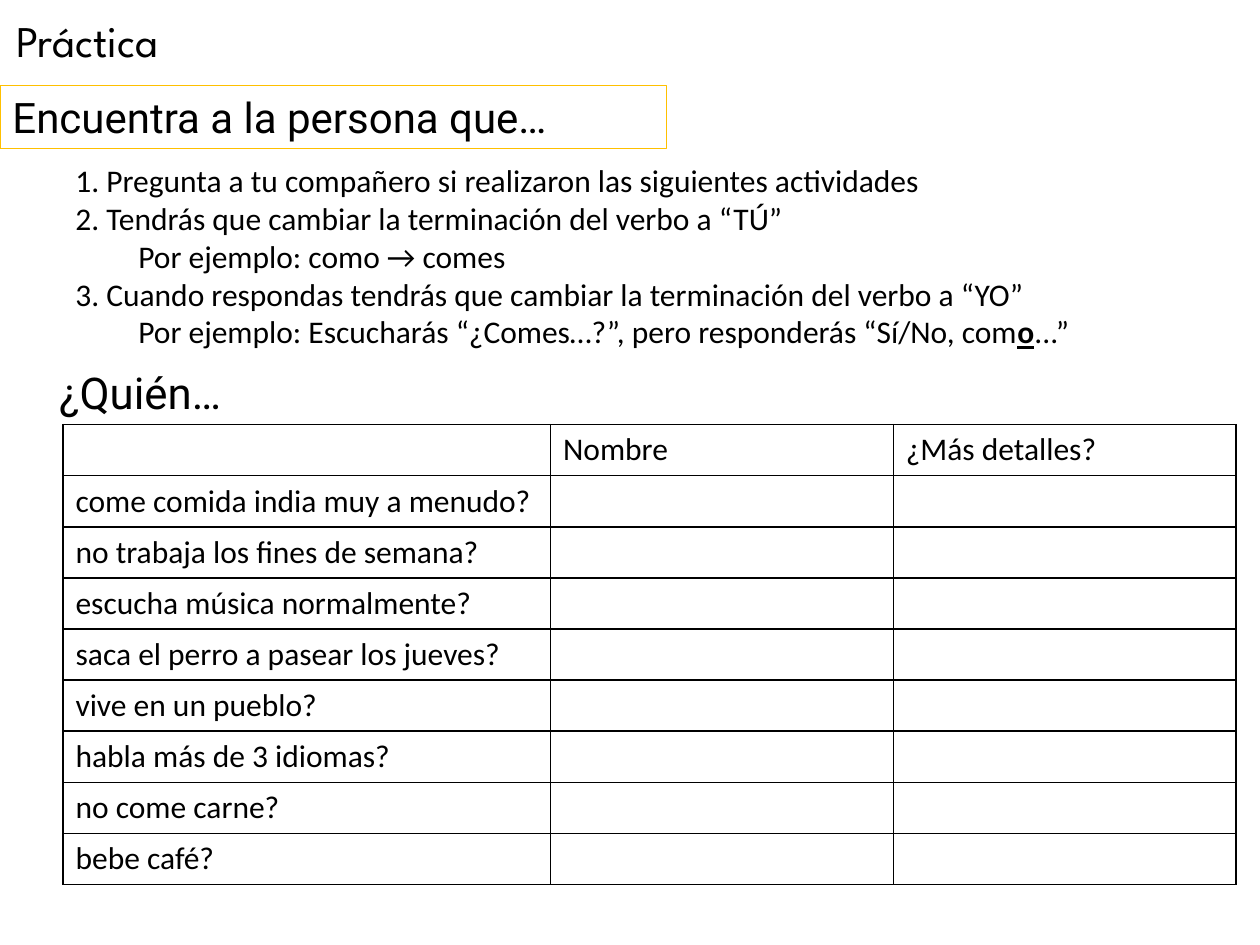
"""Build a Spanish class practice slide with instructions and an interview table."""
from lxml import etree
from pptx import Presentation
from pptx.dml.color import RGBColor
from pptx.enum import shapes, text
from pptx.oxml import ns
from pptx.util import Inches, Pt

BLACK = RGBColor(0, 0, 0)
WHITE = RGBColor(255, 255, 255)
GOLD = RGBColor(255, 192, 0)

BODY = {"name": "Calibri", "size": Pt(18)}
TITLE = {"name": "League Spartan", "size": Pt(25)}
BANNER = {"name": "Roboto", "size": Pt(24)}
QUESTION = {"name": "Roboto", "size": Pt(25)}
STRESSED = BODY | {"bold": True, "underline": True}

INSTRUCTIONS = [
    [("1. Pregunta a tu compañero si realizaron las siguientes actividades", BODY)],
    [("2. Tendrás que cambiar la terminación del verbo a “TÚ”", BODY)],
    [("\tPor ejemplo: como → comes", BODY)],
    [("3. Cuando respondas tendrás que cambiar la terminación del verbo a “YO”", BODY)],
    [("\tPor ejemplo: Escucharás “¿Comes…?”, pero responderás “Sí/No, com", BODY),
     ("o", STRESSED), ("...”", BODY)],
]
HEADERS = ["", "Nombre", "¿Más detalles?"]
ACTIVITIES = [
    "come comida india muy a menudo?",
    "no trabaja los fines de semana?",
    "escucha música normalmente?",
    "saca el perro a pasear los jueves?",
    "vive en un pueblo?",
    "habla más de 3 idiomas?",
    "no come carne?",
    "bebe café?",
]
COLUMN_WIDTHS = [3.87, 2.72, 2.72]
ROW_HEIGHT = 0.405


def add_span(para, words, style):
    """Append a black run with the given font values."""
    span = para.add_run()
    span.text = words
    span.font.color.rgb = BLACK
    for name, value in style.items():
        setattr(span.font, name, value)


def fill_frame(frame, paragraphs):
    """Write paragraphs, each a list of (words, style) pairs."""
    for index, spans in enumerate(paragraphs):
        para = frame.add_paragraph() if index else frame.paragraphs[0]
        para.alignment = text.PP_ALIGN.LEFT
        for words, style in spans:
            add_span(para, words, style)


def add_text(slide, area, paragraphs):
    """Add a text box that keeps each paragraph on one line."""
    box = slide.shapes.add_textbox(*map(Inches, area))
    box.text_frame.word_wrap = False
    box.text_frame.auto_size = text.MSO_AUTO_SIZE.SHAPE_TO_FIT_TEXT
    fill_frame(box.text_frame, paragraphs)


def add_banner(slide, area, words):
    """Add the outlined heading box."""
    box = slide.shapes.add_shape(shapes.MSO_SHAPE.RECTANGLE, *map(Inches, area))
    box.shadow.inherit = False
    box.fill.solid()
    box.fill.fore_color.rgb = WHITE
    box.line.color.rgb = GOLD
    box.line.width = Pt(0.75)
    box.text_frame.word_wrap = True
    fill_frame(box.text_frame, [[(words, BANNER)]])


def add_borders(cell):
    """Draw a thin black line on every side of a cell."""
    properties = cell._tc.get_or_add_tcPr()
    for index, side in enumerate(("lnL", "lnR", "lnT", "lnB")):
        line = etree.Element(ns.qn(f"a:{side}"), w=str(Pt(1)))
        fill = etree.SubElement(line, ns.qn("a:solidFill"))
        etree.SubElement(fill, ns.qn("a:srgbClr"), val=str(BLACK))
        properties.insert(index, line)


def add_interview_table(slide, left, top):
    """Add the grid of activities with empty answer cells."""
    rows = [HEADERS] + [[activity, "", ""] for activity in ACTIVITIES]
    size = sum(COLUMN_WIDTHS), ROW_HEIGHT * len(rows)
    table = slide.shapes.add_table(
        len(rows), len(HEADERS), *map(Inches, (left, top, *size))).table
    table.first_row = table.horz_banding = False
    for column, width in zip(table.columns, COLUMN_WIDTHS):
        column.width = Inches(width)
    for row, values in zip(table.rows, rows):
        row.height = Inches(ROW_HEIGHT)
        for cell, words in zip(row.cells, values):
            cell.fill.background()
            add_borders(cell)
            if words:
                fill_frame(cell.text_frame, [[(words, BODY)]])


def main():
    """Compose and save the slide."""
    deck = Presentation()
    deck.slide_width, deck.slide_height = Inches(10), Inches(7.5)
    page = deck.slides.add_slide(deck.slide_layouts[6])
    add_banner(page, (0, 0.68, 5.29, 0.5), "Encuentra a la persona que…")
    add_interview_table(page, 0.5, 3.37)
    add_text(page, (0.5, 1.23, 8.6, 1.62), INSTRUCTIONS)
    add_text(page, (0.37, 2.85, 1.65, 0.52), [[("¿Quién…", QUESTION)]])
    add_text(page, (0.03, 0.06, 1.64, 0.52), [[("Práctica", TITLE)]])
    deck.save("out.pptx")


if __name__ == "__main__":
    main()
